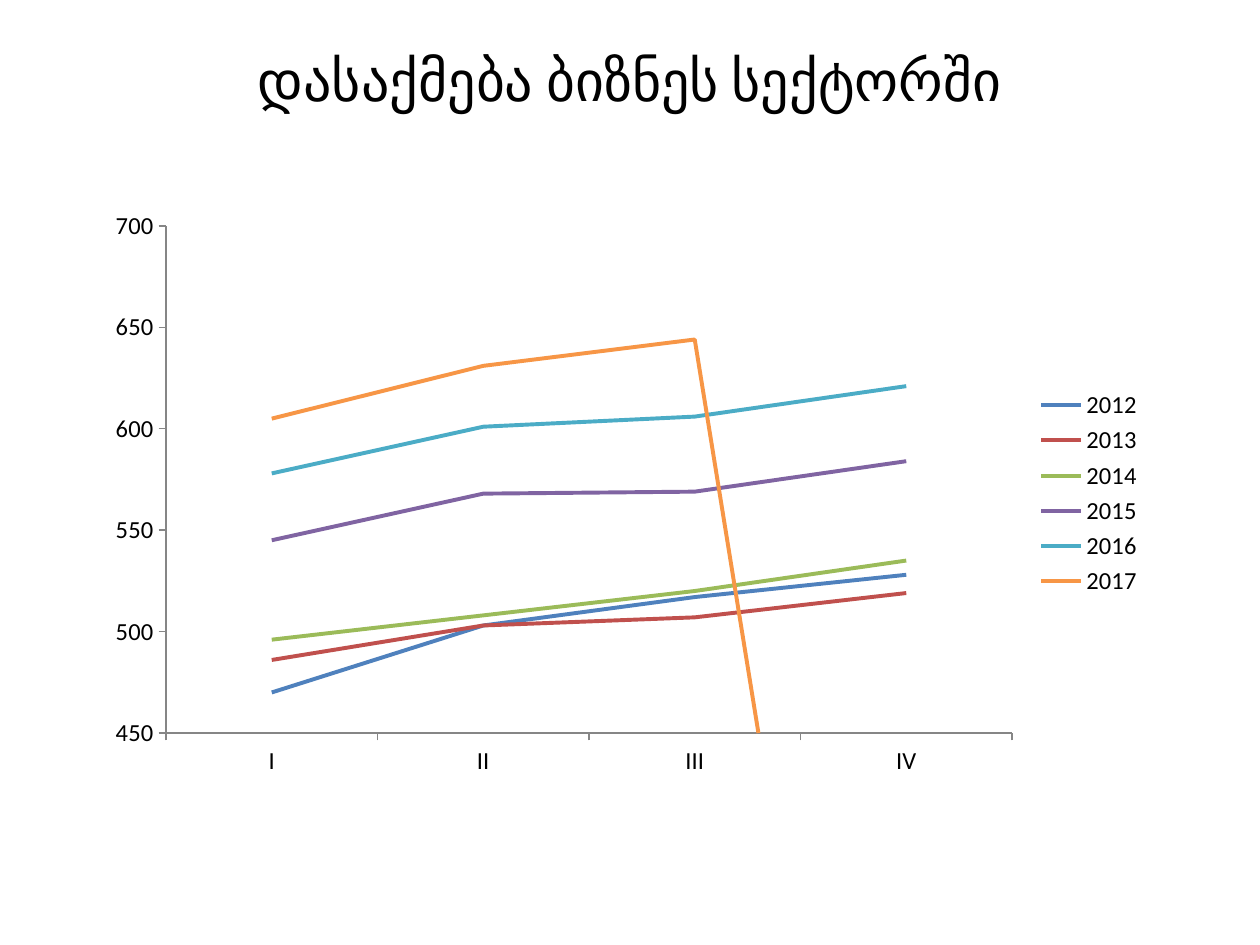
"""Build a slide with a line chart of quarterly business-sector employment."""
from dataclasses import dataclass

from pptx import Presentation
from pptx import util as u
from pptx.chart import data as chart_data
from pptx.dml.color import RGBColor
from pptx.enum import chart as charts, text


@dataclass(frozen=True)
class Theme:
    font: str = "Calibri"
    ink: str = "000000"
    axis: str = "868686"
    title_size: float = 32
    chart_size: float = 14
    series_width: float = 2.25
    axis_width: float = 0.75


@dataclass(frozen=True)
class Frame:
    left: float
    top: float
    width: float
    height: float

    def lengths(self) -> list[u.Length]:
        return [u.Inches(side) for side in (self.left, self.top, self.width, self.height)]


@dataclass(frozen=True)
class Year:
    name: str
    color: str
    values: tuple


THEME = Theme()
TITLE = "დასაქმება ბიზნეს სექტორში"
TITLE_FRAME = Frame(0.5, 0.17, 9, 0.92)
CHART_FRAME = Frame(0.75, 1.58, 8.42, 4.67)
QUARTERS = ("I", "II", "III", "IV")
YEARS = (
    Year("2012", "4F81BD", (470, 503, 517, 528)),
    Year("2013", "C0504D", (486, 503, 507, 519)),
    Year("2014", "9BBB59", (496, 508, 520, 535)),
    Year("2015", "8064A2", (545, 568, 569, 584)),
    Year("2016", "4BACC6", (578, 601, 606, 621)),
    Year("2017", "F79646", (605, 631, 644, None)),
)


def style_font(font, size: float) -> None:
    font.name = THEME.font
    font.size = u.Pt(size)
    font.bold = False
    font.color.rgb = RGBColor.from_string(THEME.ink)


def style_line(line, color: str, width: float) -> None:
    line.color.rgb = RGBColor.from_string(color)
    line.width = u.Pt(width)


def add_title(page) -> None:
    frame = page.shapes.add_textbox(*TITLE_FRAME.lengths()).text_frame
    frame.word_wrap = True
    frame.vertical_anchor = text.MSO_ANCHOR.MIDDLE
    para = frame.paragraphs[0]
    para.alignment = text.PP_ALIGN.CENTER
    span = para.add_run()
    span.text = TITLE
    style_font(span.font, THEME.title_size)


def style_axis(axis) -> None:
    axis.has_major_gridlines = False
    axis.major_tick_mark = charts.XL_TICK_MARK.OUTSIDE
    axis.minor_tick_mark = charts.XL_TICK_MARK.NONE
    style_line(axis.format.line, THEME.axis, THEME.axis_width)


def add_employment_chart(page) -> None:
    employment = chart_data.CategoryChartData(number_format="0")
    employment.categories = QUARTERS
    for year in YEARS:
        employment.add_series(year.name, year.values)
    chart = page.shapes.add_chart(
        charts.XL_CHART_TYPE.LINE, *CHART_FRAME.lengths(), employment
    ).chart
    style_font(chart.font, THEME.chart_size)
    chart.has_title = False
    chart.has_legend = True
    chart.legend.position = charts.XL_LEGEND_POSITION.RIGHT
    chart.legend.include_in_layout = False

    style_axis(chart.category_axis)
    style_axis(chart.value_axis)
    chart.value_axis.minimum_scale = 450
    chart.value_axis.tick_labels.number_format = "0"
    chart.value_axis.tick_labels.number_format_is_linked = False

    plot = chart.plots[0]
    plot.vary_by_categories = False
    for year, series in zip(YEARS, plot.series):
        series.smooth = False
        series.marker.style = charts.XL_MARKER_STYLE.NONE
        style_line(series.format.line, year.color, THEME.series_width)
    for blanks in chart.element.xpath("c:chart/c:dispBlanksAs"):
        blanks.set("val", "zero")


def main() -> None:
    deck = Presentation()
    deck.slide_width, deck.slide_height = u.Inches(10), u.Inches(7.5)
    page = deck.slides.add_slide(deck.slide_layouts[6])
    add_title(page)
    add_employment_chart(page)
    deck.save("out.pptx")


if __name__ == "__main__":
    main()
